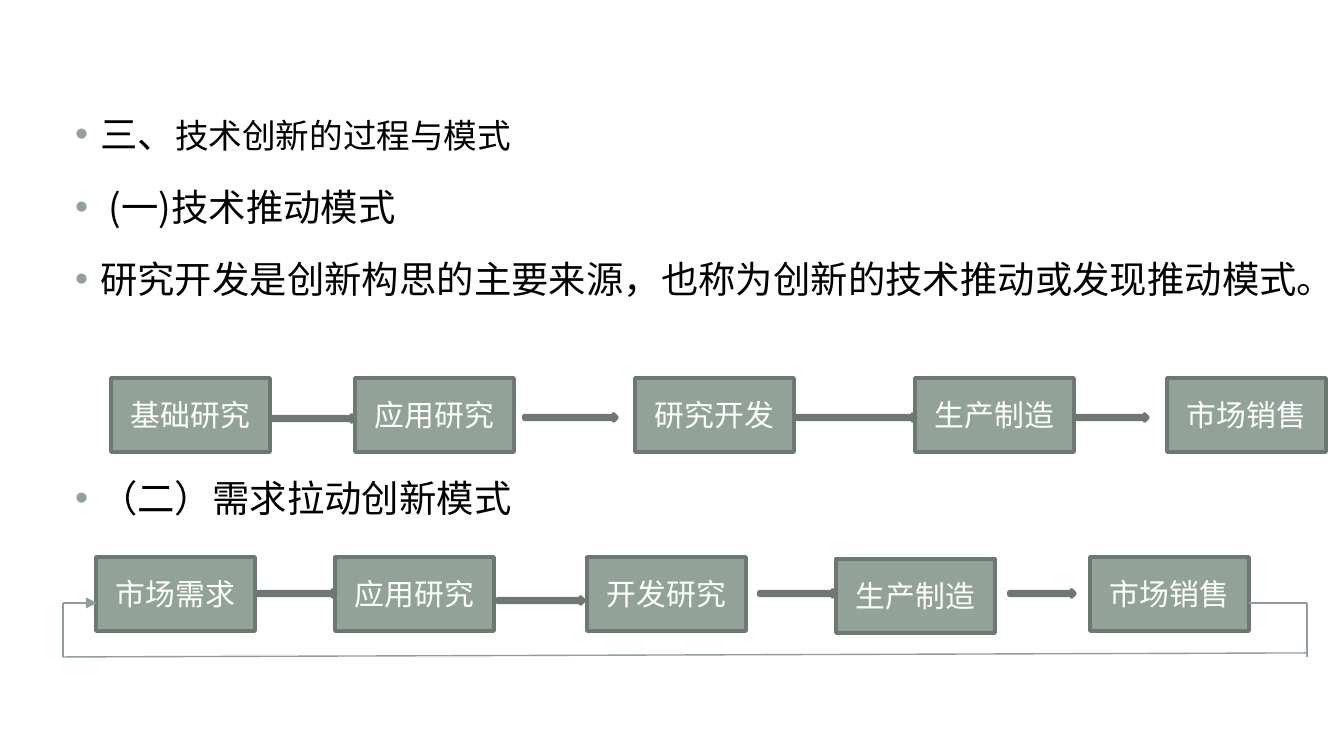
from lxml.etree import SubElement
from pptx import Presentation
from pptx.dml.color import RGBColor
from pptx.enum.shapes import MSO_CONNECTOR, MSO_SHAPE
from pptx.enum.text import MSO_ANCHOR, PP_ALIGN
from pptx.oxml.ns import qn
from pptx.util import Pt

PX = 914400 / 134.4
SAGE = RGBColor(0x93, 0xA2, 0x99)
DARK_SAGE = RGBColor(0x6D, 0x78, 0x71)
LOOP_GREEN = RGBColor(0x8F, 0x9F, 0x96)
WHITE = RGBColor(0xFF, 0xFF, 0xFF)
BLACK = RGBColor(0, 0, 0)
BODY_FONT = "Noto Sans CJK SC"
BOX_FONT = "Quicksand"


def px(*lengths):
    return [round(length * PX) for length in lengths]


def add_block(kind, left, top, width, height):
    """Add a sage shape with a dark outline and no shadow."""
    block = slide.shapes.add_shape(kind, *px(left, top, width, height))
    block.shadow.inherit = False
    block.fill.solid()
    block.fill.fore_color.rgb = SAGE
    block.line.color.rgb = DARK_SAGE
    block.line.width = Pt(2)
    return block


deck = Presentation()
deck.slide_width, deck.slide_height = px(1344, 756)
slide = deck.slides.add_slide(deck.slide_layouts[6])

# Bulleted text; the last point leaves room for the first flow above it
points = [
    ([("三、", 20), ("技术创新的过程与模式", 18)], 3),
    ([(" (一)技术推动模式", 20)], 3),
    ([("研究开发是创新构思的主要来源，也称为创新的技术推动或发现推动模式。", 20)], 3),
    ([("（二）需求拉动创新模式", 20)], 81.2),
]
body = slide.shapes.add_textbox(*px(50, 82, 1294, 593))
frame = body.text_frame
frame.word_wrap = True
frame.margin_right = 0
for index, (pieces, gap) in enumerate(points):
    para = frame.add_paragraph() if index else frame.paragraphs[0]
    para.line_spacing = 1.5
    para.space_before = Pt(gap)
    properties = para._p.get_or_add_pPr()
    margin, indent = px(37, -25)
    properties.set("marL", str(margin))
    properties.set("indent", str(indent))
    bullet_color = SubElement(properties, qn("a:buClr"))
    SubElement(bullet_color, qn("a:srgbClr"), val=str(SAGE))
    SubElement(properties, qn("a:buFont"), typeface="Arial")
    SubElement(properties, qn("a:buChar"), char="•")
    for text, size in pieces:
        span = para.add_run()
        span.text = text
        span.font.size = Pt(size)
        span.font.name = BODY_FONT
        span.font.color.rgb = BLACK
        SubElement(span.font._element, qn("a:ea"), typeface=BODY_FONT)

# Steps of both flows: text, left, top
steps = [
    ("基础研究", 111, 378),
    ("应用研究", 355, 378),
    ("研究开发", 635, 378),
    ("生产制造", 915, 378),
    ("市场销售", 1167, 378),
    ("市场需求", 96, 557),
    ("应用研究", 335, 557),
    ("开发研究", 587, 557),
    ("生产制造", 836, 559),
    ("市场销售", 1090, 557),
]
for text, left, top in steps:
    box = add_block(MSO_SHAPE.RECTANGLE, left, top, 159, 74)
    box.text_frame.text = text
    box.text_frame.vertical_anchor = MSO_ANCHOR.MIDDLE
    para = box.text_frame.paragraphs[0]
    para.alignment = PP_ALIGN.CENTER
    font = para.runs[0].font
    font.size = Pt(16)
    font.name = BOX_FONT
    font.color.rgb = WHITE

# Arrows between steps: left, top, width
arrows = [
    (270, 415, 85), (524, 414, 93), (794, 414, 122), (1074, 414, 74),
    (255, 590, 81), (497, 597, 87), (759, 590, 77), (1009, 590, 66),
]
for left, top, width in arrows:
    add_block(MSO_SHAPE.RIGHT_ARROW, left, top, width, 7)

# Feedback loop from sales back to demand
loop_lines = [
    (1249, 603, 1307, 603),
    (63, 657, 1307, 653),
    (1307, 603, 1307, 657),
    (63, 657, 63, 603),
    (63, 603, 97, 603),
]
for ends in loop_lines:
    connector = slide.shapes.add_connector(MSO_CONNECTOR.STRAIGHT, *px(*ends))
    connector.line.color.rgb = LOOP_GREEN
    connector.line.width = Pt(0.75)
    SubElement(connector._element.spPr, qn("a:effectLst"))
SubElement(connector.line._get_or_add_ln(), qn("a:tailEnd"), type="triangle")

deck.save("out.pptx")
